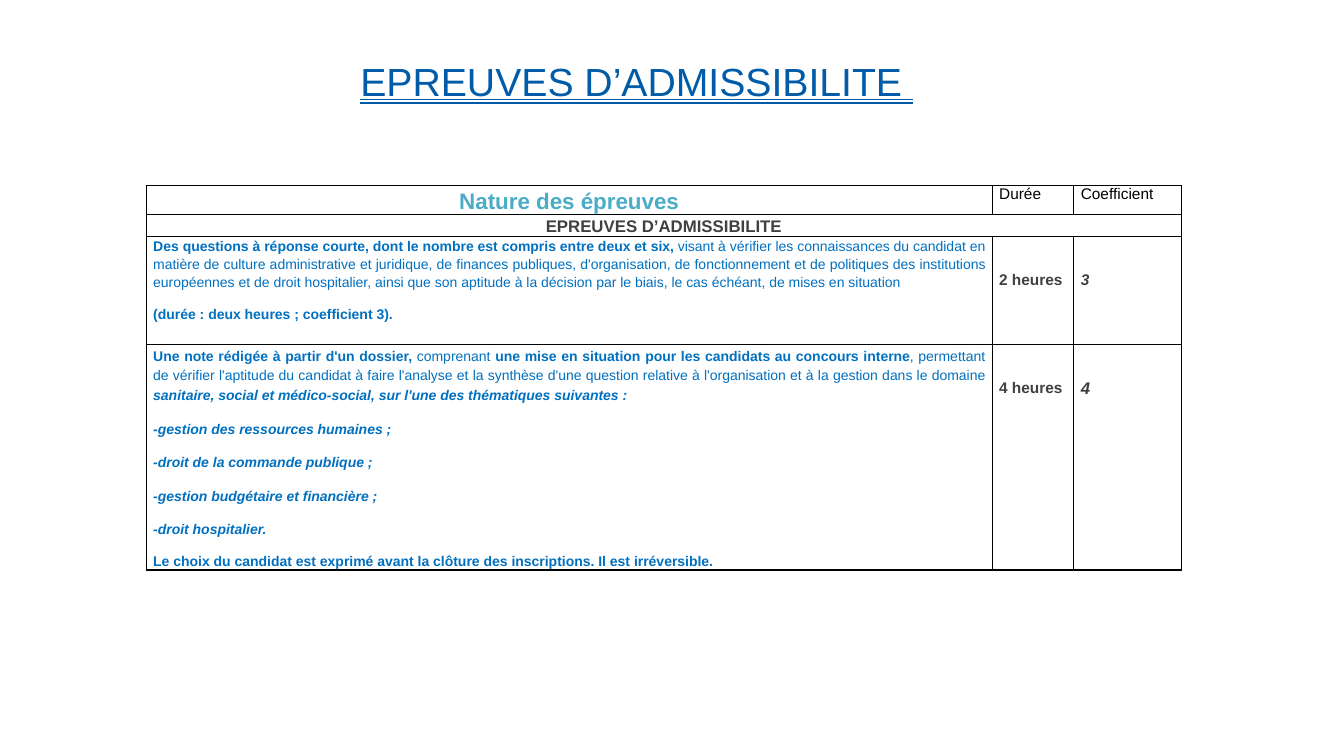
from lxml import etree
from pptx import Presentation
from pptx import util as u
from pptx.dml.color import RGBColor
from pptx.enum import text
from pptx.oxml import ns

TITLE_BLUE = RGBColor(0x00, 0x5C, 0xA9)
HEADING_TEAL = RGBColor(0x4B, 0xAC, 0xC6)
BODY_BLUE = RGBColor(0x00, 0x70, 0xC0)
GREY = RGBColor(0x40, 0x40, 0x40)
BLACK = RGBColor(0, 0, 0)
FONT = "Arial"
LEFT, CENTER, JUSTIFY = (text.PP_ALIGN.LEFT, text.PP_ALIGN.CENTER,
                         text.PP_ALIGN.JUSTIFY)

COLUMN_WIDTHS = [8.39, 0.81, 1.07]
ROW_HEIGHTS = [0.29, 0.22, 1.07, 2.23]
RESULT_DROP = 0.32  # lowers durations and coefficients by one line

# Each paragraph is a list of runs: (wording, bold, italic).
SHORT_QUESTIONS = [
    [("Des questions à réponse courte, dont le nombre est compris entre deux et six, ", True, False),
     ("visant à vérifier les connaissances du candidat en matière de culture administrative "
      "et juridique, de finances publiques, d'organisation, de fonctionnement et de politiques "
      "des institutions européennes et de droit hospitalier, ainsi que son aptitude à la décision "
      "par le biais, le cas échéant, de mises en situation ", False, False)],
    [("(durée : deux heures ; coefficient 3).", True, False)],
]
TOPICS = ["gestion des ressources humaines ;", "droit de la commande publique ;",
          "gestion budgétaire et financière ;", "droit hospitalier."]
CASE_NOTE = [
    [("Une note rédigée à partir d'un dossier, ", True, False),
     ("comprenant ", False, False),
     ("une mise en situation pour les candidats au concours interne", True, False),
     (", permettant de vérifier l'aptitude du candidat à faire l'analyse et la synthèse d'une "
      "question relative à l'organisation et à la gestion dans le domaine ", False, False),
     ("sanitaire, social et médico-social, sur l'une des thématiques suivantes :", True, True)],
    *[[("-" + topic, True, True)] for topic in TOPICS],
]
CHOICE = [[("Le choix du candidat est exprimé avant la clôture des inscriptions. "
            "Il est irréversible.", True, False)]]


def add_title(slide, left, top, width, height):
    title = slide.shapes.title
    title.left, title.top, title.width, title.height = map(u.Inches, (left, top, width, height))
    title.text_frame.vertical_anchor = text.MSO_ANCHOR.MIDDLE
    paragraph = title.text_frame.paragraphs[0]
    paragraph.alignment, paragraph.line_spacing = CENTER, 0.9
    run = paragraph.add_run()
    run.text = "EPREUVES D’ADMISSIBILITE "
    run.font.name, run.font.size = FONT, u.Pt(28)
    run.font.color.rgb = TITLE_BLUE
    run.font.underline = text.MSO_UNDERLINE.DOUBLE_LINE


def format_cell(cell):
    """Give the cell thin black borders, no fill and tight margins."""
    properties = cell._tc.get_or_add_tcPr()
    for side in ("a:lnL", "a:lnR", "a:lnT", "a:lnB"):
        line = etree.SubElement(properties, ns.qn(side), w=str(u.Pt(1)))
        fill = etree.SubElement(line, ns.qn("a:solidFill"))
        etree.SubElement(fill, ns.qn("a:srgbClr"), val=str(BLACK))
    cell.fill.background()
    cell.margin_left = cell.margin_right = u.Inches(0.07)
    cell.margin_top = cell.margin_bottom = 0


def write(cell, paragraphs, size, color, alignment=LEFT, spacing=1.15):
    """Append paragraphs to the cell, filling its empty first one."""
    frame = cell.text_frame
    for runs in paragraphs:
        paragraph = frame.paragraphs[0] if not frame.text else frame.add_paragraph()
        paragraph.alignment, paragraph.line_spacing = alignment, spacing
        paragraph.space_after = u.Pt(10)
        for wording, bold, italic in runs:
            run = paragraph.add_run()
            run.text = wording
            run.font.name, run.font.size = FONT, u.Pt(size)
            run.font.bold, run.font.italic = bold, italic
            run.font.color.rgb = color


def add_exam_table(slide, left, top):
    table = slide.shapes.add_table(
        len(ROW_HEIGHTS), len(COLUMN_WIDTHS), u.Inches(left), u.Inches(top),
        u.Inches(sum(COLUMN_WIDTHS)), u.Inches(sum(ROW_HEIGHTS))).table
    table.first_row = table.horz_banding = False
    for column, width in zip(table.columns, COLUMN_WIDTHS):
        column.width = u.Inches(width)
    for row, height in zip(table.rows, ROW_HEIGHTS):
        row.height = u.Inches(height)
    for cell in table.iter_cells():
        format_cell(cell)
    table.cell(1, 0).merge(table.cell(1, 2))

    write(table.cell(0, 0), [[("Nature des épreuves", True, False)]], 16, HEADING_TEAL, CENTER)
    for column, heading in enumerate(("Durée", "Coefficient"), start=1):
        write(table.cell(0, column), [[(heading, False, False)]], 11, BLACK, spacing=1.0)
    write(table.cell(1, 0), [[("EPREUVES D’ADMISSIBILITE", True, False)]], 12, GREY, CENTER)

    write(table.cell(2, 0), SHORT_QUESTIONS, 10, BODY_BLUE, JUSTIFY)
    write(table.cell(3, 0), CASE_NOTE, 10, BODY_BLUE, JUSTIFY, u.Pt(14))
    write(table.cell(3, 0), CHOICE, 10, BODY_BLUE, JUSTIFY)
    for row, duration, coefficient, size in ((2, "2 heures", "3", 11), (3, "4 heures", "4", 12)):
        write(table.cell(row, 1), [[(duration, True, False)]], 11, GREY)
        write(table.cell(row, 2), [[(coefficient, True, True)]], size, GREY)
        for column in (1, 2):
            table.cell(row, column).margin_top = u.Inches(RESULT_DROP)


def main():
    presentation = Presentation()
    presentation.slide_width, presentation.slide_height = u.Inches(13.33), u.Inches(7.5)
    slide = presentation.slides.add_slide(presentation.slide_layouts[5])
    add_title(slide, 0.56, 0.46, 11.51, 0.74)
    add_exam_table(slide, 1.45, 1.84)
    presentation.save("out.pptx")


if __name__ == "__main__":
    main()
